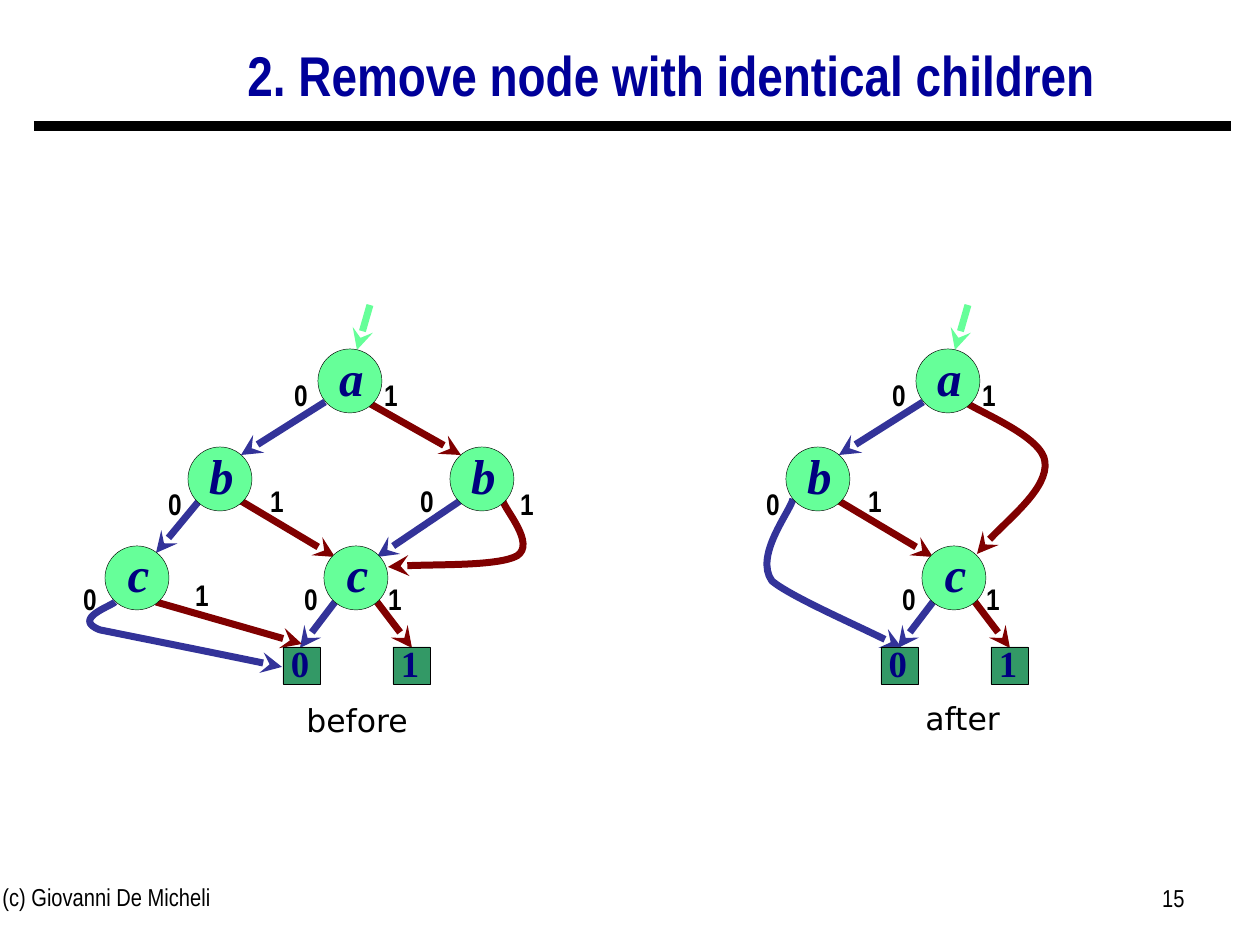
from lxml.etree import SubElement
from pptx import Presentation
from pptx.dml.color import RGBColor
from pptx.enum.shapes import MSO_CONNECTOR, MSO_SHAPE
from pptx.enum.text import MSO_ANCHOR, MSO_AUTO_SIZE, PP_ALIGN
from pptx.oxml.ns import qn
from pptx.util import Emu, Pt

# Content: lengths in px, 126 to the inch
SCALE = 914400 // 126
COLORS = {
    "black": "000000", "title": "000099", "letter": "000080",
    "entry": "66FF99", "low": "333399", "high": "800000",
    "node": "66FF99", "leaf": "339966",
}
NARROW, SERIF, SANS = "Arial Narrow", "Times New Roman", "DejaVu Sans"
TITLE = "2. Remove node with identical children"
RULE = [(34, 126), (1231, 126)]
NODE, LEAF = 64, 37
LABEL_SIZE = (14, 35)

# Nodes by centre, leaves and branch labels by top left corner,
# edges by two points or by the points of a Bezier path
SHARED = {
    "nodes": [("a", 350, 381), ("b", 220, 479), ("c", 356, 578)],
    "leaves": [("0", 283, 647), ("1", 393, 647)],
    "labels": [("0", 294, 377), ("1", 384, 377), ("0", 168, 486),
               ("1", 270, 483), ("0", 304, 581), ("1", 388, 581)],
    "edges": [
        ("entry", [(370, 305), (357, 350)]),
        ("low", [(325, 402), (241, 455)]),
        ("high", [(241, 501), (335, 557)]),
        ("low", [(335, 602), (300, 648)]),
        ("high", [(377, 602), (412, 648)]),
    ],
}
BEFORE = {
    "nodes": [("b", 482, 479), ("c", 137, 578)],
    "labels": [("0", 420, 483), ("1", 520, 486), ("0", 83, 581), ("1", 195, 577)],
    "edges": [
        ("high", [(367, 402), (461, 455)]),
        ("low", [(460, 501), (377, 557)]),
        ("high", [(503, 501), (505, 510), (536, 544), (517, 556),
                  (498, 566), (415, 564), (388, 567)]),
        ("low", [(199, 501), (156, 553)]),
        ("high", [(156, 602), (302, 644)]),
        ("low", [(115, 602), (112, 606), (71, 619), (100, 630),
                 (130, 636), (244, 659), (282, 667)]),
    ],
}
AFTER = {
    "edges": [
        ("high", [(367, 402), (381, 412), (445, 437), (447, 462),
                  (450, 488), (393, 534), (379, 554)]),
        ("low", [(195, 499), (192, 512), (156, 556), (174, 581),
                 (192, 596), (276, 633), (304, 648)]),
    ],
}
# Own parts, shift to the right
GRAPHS = [(BEFORE, 0), (AFTER, 598)]
# Text, box, alignment, font, size
CAPTIONS = [
    ("before", (294, 695, 136, 50), PP_ALIGN.LEFT, SANS, 18),
    ("after", (913, 693, 110, 50), PP_ALIGN.LEFT, SANS, 18),
    ("(c) Giovanni De Micheli", (-10, 876, 399, 66), PP_ALIGN.LEFT, NARROW, 14),
    ("15", (903, 877, 294, 66), PP_ALIGN.RIGHT, NARROW, 14),
]


def px(*values):
    return [Emu(v * SCALE) for v in values]


def rgb(name):
    return RGBColor.from_string(COLORS[name])


def write(tf, text, font, size, color="black", align=PP_ALIGN.CENTER,
          bold=False, italic=False):
    p = tf.paragraphs[0]
    p.alignment = align
    r = p.add_run()
    r.text = text
    r.font.name, r.font.size = font, Pt(size)
    r.font.bold, r.font.italic = bold, italic
    r.font.color.rgb = rgb(color)
    return p


def set_insets(tf, left=0, top=0, right=0, bottom=0):
    (tf.margin_left, tf.margin_top,
     tf.margin_right, tf.margin_bottom) = px(left, top, right, bottom)


def add_line(s, points, color, width, arrow=True):
    start, *rest = [px(*point) for point in points]
    if len(rest) == 1:
        sp = s.shapes.add_connector(MSO_CONNECTOR.STRAIGHT, *start, *rest[0])
    else:
        builder = s.shapes.build_freeform(*start, scale=1.0)
        builder.add_line_segments(rest, close=False)
        sp = builder.convert_to_shape()
        sp.fill.background()
        # Every three points make one cubic curve
        path = sp.element.spPr.find(".//" + qn("a:path"))
        corners = path.findall(qn("a:lnTo"))
        for i in range(0, len(corners), 3):
            curve = SubElement(path, qn("a:cubicBezTo"))
            for corner in corners[i:i + 3]:
                curve.append(corner[0])
                path.remove(corner)
    sp.line.color.rgb = rgb(color)
    sp.line.width = Pt(width)
    sp_pr = sp.element.spPr
    if arrow:
        SubElement(sp_pr.find(qn("a:ln")), qn("a:tailEnd"), type="stealth")
    SubElement(sp_pr, qn("a:effectLst"))


def add_vertex(s, kind, box, fill, text, size, insets, italic=False):
    sp = s.shapes.add_shape(kind, *px(*box))
    sp.shadow.inherit = False
    sp.fill.solid()
    sp.fill.fore_color.rgb = rgb(fill)
    sp.line.color.rgb = rgb("black")
    sp.line.width = Pt(0.25)
    tf = sp.text_frame
    tf.word_wrap = False
    tf.vertical_anchor = MSO_ANCHOR.MIDDLE
    set_insets(tf, **insets)
    write(tf, text, SERIF, size, "letter", bold=True, italic=italic)


def add_graph(s, own, shift):
    def parts(key):
        return SHARED.get(key, []) + own.get(key, [])

    for color, points in parts("edges"):
        add_line(s, [(x + shift, y) for x, y in points], color, 4)
    for text, x, y in parts("nodes"):
        box = (x + shift - NODE // 2, y - NODE // 2, NODE, NODE)
        add_vertex(s, MSO_SHAPE.OVAL, box, "node", text, 28,
                   {"left": 3, "bottom": 9}, italic=True)
    for text, x, y in parts("leaves"):
        add_vertex(s, MSO_SHAPE.RECTANGLE, (x + shift, y, LEAF, LEAF), "leaf",
                   text, 21, {"right": 3, "bottom": 5})
    for text, x, y in parts("labels"):
        tf = s.shapes.add_textbox(*px(x + shift, y, *LABEL_SIZE)).text_frame
        tf.word_wrap = False
        set_insets(tf)
        write(tf, text, NARROW, 17, bold=True)


def main():
    prs = Presentation()
    prs.slide_width, prs.slide_height = px(1260, 945)
    s = prs.slides.add_slide(prs.slide_layouts[5])

    # Title and rule
    title = s.shapes.title
    title.left, title.top, title.width, title.height = px(29, -14, 1285, 184)
    tf = title.text_frame
    tf.auto_size = MSO_AUTO_SIZE.NONE
    tf.vertical_anchor = MSO_ANCHOR.MIDDLE
    p = write(tf, TITLE, NARROW, 32, "title", bold=True)
    p.line_spacing = 0.9
    add_line(s, RULE, "black", 6, arrow=False)

    # Decision diagrams
    for own, shift in GRAPHS:
        add_graph(s, own, shift)

    # Captions and footer
    for text, box, align, font, size in CAPTIONS:
        tf = s.shapes.add_textbox(*px(*box)).text_frame
        tf.word_wrap = True
        write(tf, text, font, size, align=align)

    prs.save("out.pptx")


if __name__ == "__main__":
    main()
